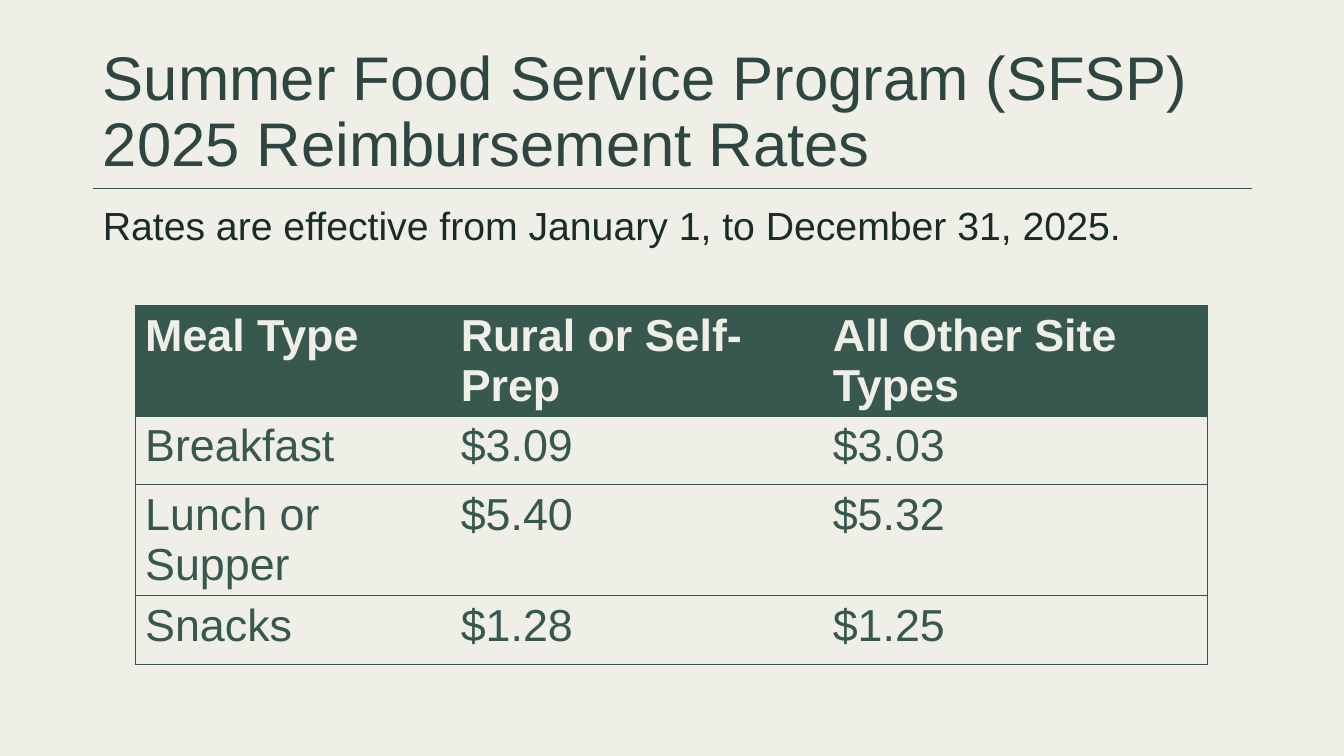
from lxml import etree
from pptx import Presentation
from pptx.dml.color import RGBColor
from pptx.enum import shapes, text
from pptx.oxml import ns
from pptx.util import Inches, Pt

CREAM = RGBColor(0xEF, 0xEE, 0xE7)
GREEN = RGBColor(0x36, 0x58, 0x4F)
DARK = RGBColor(0x2D, 0x46, 0x41)
INK = RGBColor(0x1B, 0x2C, 0x28)


def style(para, size, color, bold=False):
    para.alignment = text.PP_ALIGN.LEFT
    for run in para.runs:
        font = run.font
        font.name, font.size, font.bold = "Arial", Pt(size), bold
        font.color.rgb = color


def fill_holder(holder, box, words, size, color, anchor):
    holder.left, holder.top, holder.width, holder.height = map(Inches, box)
    frame = holder.text_frame
    frame.text = words
    frame.word_wrap = True
    frame.auto_size = text.MSO_AUTO_SIZE.NONE
    frame.vertical_anchor = anchor
    para = frame.paragraphs[0]
    para.line_spacing = 0.9
    style(para, size, color)
    return para


prs = Presentation()
prs.slide_width, prs.slide_height = Inches(13.33), Inches(7.5)
slide = prs.slides.add_slide(prs.slide_layouts[1])
slide.background.fill.solid()
slide.background.fill.fore_color.rgb = CREAM

# Rule under the title
rule = slide.shapes.add_connector(
    shapes.MSO_CONNECTOR.STRAIGHT,
    Inches(0.92), Inches(1.87), Inches(12.42), Inches(1.87))
rule.line.color.rgb = GREEN
rule.line.width = Pt(0.75)
etree.SubElement(rule._element.spPr, ns.qn("a:effectLst"))

# Title and effective dates
fill_holder(slide.shapes.title, (0.92, 0.4, 11.5, 1.45),
            "Summer Food Service Program (SFSP) 2025 Reimbursement Rates",
            44, DARK, text.MSO_ANCHOR.MIDDLE)
dates = fill_holder(slide.placeholders[1], (0.92, 2, 11.05, 0.63),
                    "Rates are effective from January 1, to December 31, 2025.",
                    28, INK, text.MSO_ANCHOR.TOP)
dates.space_before = Pt(10)
props = dates._p.get_or_add_pPr()
props.set("marL", "0")
props.set("indent", "0")
etree.SubElement(props, ns.qn("a:buNone"))

# Rates table
rates = [
    ("Meal Type", "Rural or Self-Prep", "All Other Site Types"),
    ("Breakfast", "$3.09", "$3.03"),
    ("Lunch or Supper", "$5.40", "$5.32"),
    ("Snacks", "$1.28", "$1.25"),
]
widths = (3.13, 3.69, 3.82)
heights = (1.1, 0.68, 1.1, 0.68)
table = slide.shapes.add_table(
    len(rates), len(widths), Inches(1.34), Inches(3.03),
    Inches(sum(widths)), Inches(sum(heights))).table
table.horz_banding = False
for col, width in zip(table.columns, widths):
    col.width = Inches(width)
for row, height in zip(table.rows, heights):
    row.height = Inches(height)

for r, row in enumerate(rates):
    for c, words in enumerate(row):
        cell = table.cell(r, c)
        cell.text = words
        head = r == 0
        style(cell.text_frame.paragraphs[0], 32, CREAM if head else GREEN, head)
        if head:
            cell.fill.solid()
            cell.fill.fore_color.rgb = GREEN
        else:
            cell.fill.background()
        # Only outer sides and row edges are ruled
        ruled = {"lnL": c == 0, "lnR": c == len(row) - 1,
                 "lnT": True, "lnB": True}
        for i, (side, shown) in enumerate(ruled.items()):
            edge = etree.Element(ns.qn("a:" + side), w=str(Pt(1)))
            if shown:
                paint = etree.SubElement(edge, ns.qn("a:solidFill"))
                etree.SubElement(paint, ns.qn("a:srgbClr"), val=str(GREEN))
            else:
                etree.SubElement(edge, ns.qn("a:noFill"))
            cell._tc.get_or_add_tcPr().insert(i, edge)

prs.save("out.pptx")
